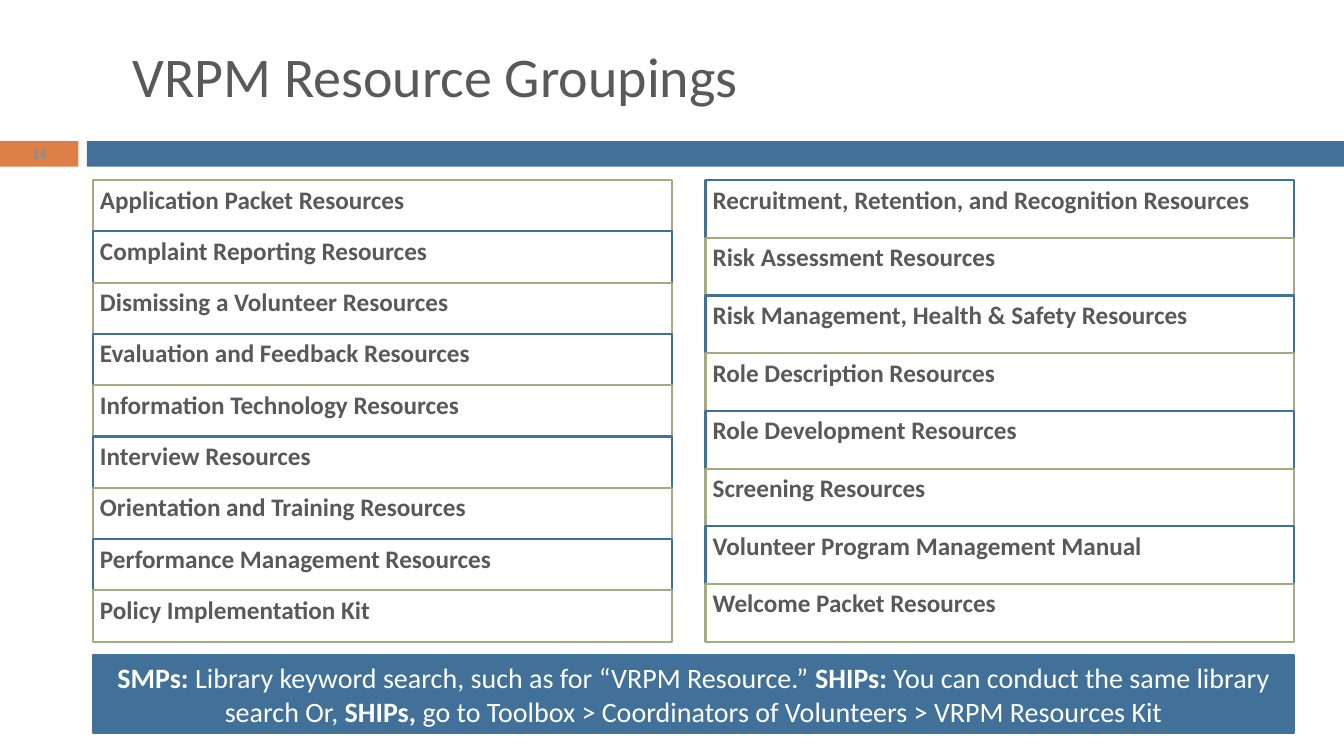
import pptx
import pptx.util
import pptx.dml.color
import pptx.enum.shapes
import pptx.enum.text

Cm = pptx.util.Cm
Pt = pptx.util.Pt
ALIGN = pptx.enum.text.PP_ALIGN
ANCHOR = pptx.enum.text.MSO_ANCHOR

FONT = "Calibri"
BLUE, GREEN, ORANGE = "417199", "A5AB81", "DD8047"
WHITE, GREY, NUMBER_GREY = "FFFFFF", "595959", "8B8B8B"

LEFT_GROUPS = [
    "Application Packet Resources",
    "Complaint Reporting Resources",
    "Dismissing a Volunteer Resources",
    "Evaluation and Feedback Resources",
    "Information Technology Resources",
    "Interview Resources",
    "Orientation and Training Resources",
    "Performance Management Resources",
    "Policy Implementation Kit",
]
RIGHT_GROUPS = [
    "Recruitment, Retention, and Recognition Resources",
    "Risk Assessment Resources",
    "Risk Management, Health & Safety Resources",
    "Role Description Resources",
    "Role Development Resources",
    "Screening Resources",
    "Volunteer Program Management Manual",
    "Welcome Packet Resources",
]
SEARCH_TIPS = [
    ("SMPs:", True),
    (" Library keyword search, such as for “VRPM Resource.” ", False),
    ("SHIPs: ", True),
    ("You can conduct the same library search Or, ", False),
    ("SHIPs,", True),
    (" go to Toolbox > Coordinators of Volunteers > VRPM Resources Kit", False),
]


def rgb(color):
    return pptx.dml.color.RGBColor.from_string(color)


def add_rect(s, x, y, w, h, fill, line=None):
    sp = s.shapes.add_shape(pptx.enum.shapes.MSO_SHAPE.RECTANGLE,
                            Cm(x), Cm(y), Cm(w), Cm(h))
    sp.shadow.inherit = False
    sp.fill.solid()
    sp.fill.fore_color.rgb = rgb(fill)
    if line:
        sp.line.color.rgb = rgb(line)
        sp.line.width = Pt(1.5)
    else:
        sp.line.fill.background()
    return sp


def write(sp, runs, size, color, align=ALIGN.LEFT, anchor=ANCHOR.MIDDLE):
    """Fill a shape with one paragraph of (text, bold) runs."""
    tf = sp.text_frame
    tf.word_wrap = True
    tf.vertical_anchor = anchor
    p = tf.paragraphs[0]
    p.alignment = align
    for text, bold in runs:
        r = p.add_run()
        r.text = text
        r.font.name = FONT
        r.font.size = Pt(size)
        r.font.bold = bold
        r.font.color.rgb = rgb(color)
    return tf


def set_margins(tf, margin):
    tf.margin_left = tf.margin_right = Cm(margin)
    tf.margin_top = tf.margin_bottom = Cm(margin)


def add_title(s, x, y, w, h, text):
    sp = s.shapes.add_textbox(Cm(x), Cm(y), Cm(w), Cm(h))
    write(sp, [(text, False)], 40, GREY)


def add_header_band(s, x, y, w, h, number):
    tab_width, gap = 1.98, 0.21
    tab = add_rect(s, x, y, tab_width, h, ORANGE)
    tf = write(tab, [(number, True)], 10, NUMBER_GREY, ALIGN.CENTER)
    set_margins(tf, 0)
    offset = tab_width + gap
    add_rect(s, x + offset, y, w - offset, h, BLUE)


def add_group_list(s, x, y, w, h, groups, outlines):
    """Stack equal rows, alternating between the two outline colours."""
    row_height = h / len(groups)
    for i, group in enumerate(groups):
        row = add_rect(s, x, y + i * row_height, w, row_height,
                       WHITE, outlines[i % 2])
        tf = write(row, [(group, True)], 18, GREY, anchor=ANCHOR.TOP)
        set_margins(tf, 0.18)
        tf.paragraphs[0].line_spacing = 0.9


def add_search_banner(s, x, y, w, h, runs):
    banner = add_rect(s, x, y, w, h, BLUE, BLUE)
    write(banner, runs, 20, WHITE, ALIGN.CENTER)


def main():
    prs = pptx.Presentation()
    prs.slide_width, prs.slide_height = Cm(33.87), Cm(19.05)
    s = prs.slides.add_slide(prs.slide_layouts[6])

    # Header
    add_header_band(s, 0, 3.56, 33.87, 0.64, "14")
    add_title(s, 3.1, 0.91, 25.4, 1.96, "VRPM Resource Groupings")

    # Resource lists
    add_group_list(s, 2.34, 4.54, 14.59, 11.63, LEFT_GROUPS, (GREEN, BLUE))
    add_group_list(s, 17.78, 4.54, 14.84, 11.63, RIGHT_GROUPS, (BLUE, GREEN))

    # Search instructions
    add_search_banner(s, 2.34, 16.51, 30.28, 1.96, SEARCH_TIPS)

    prs.save("out.pptx")


if __name__ == "__main__":
    main()
